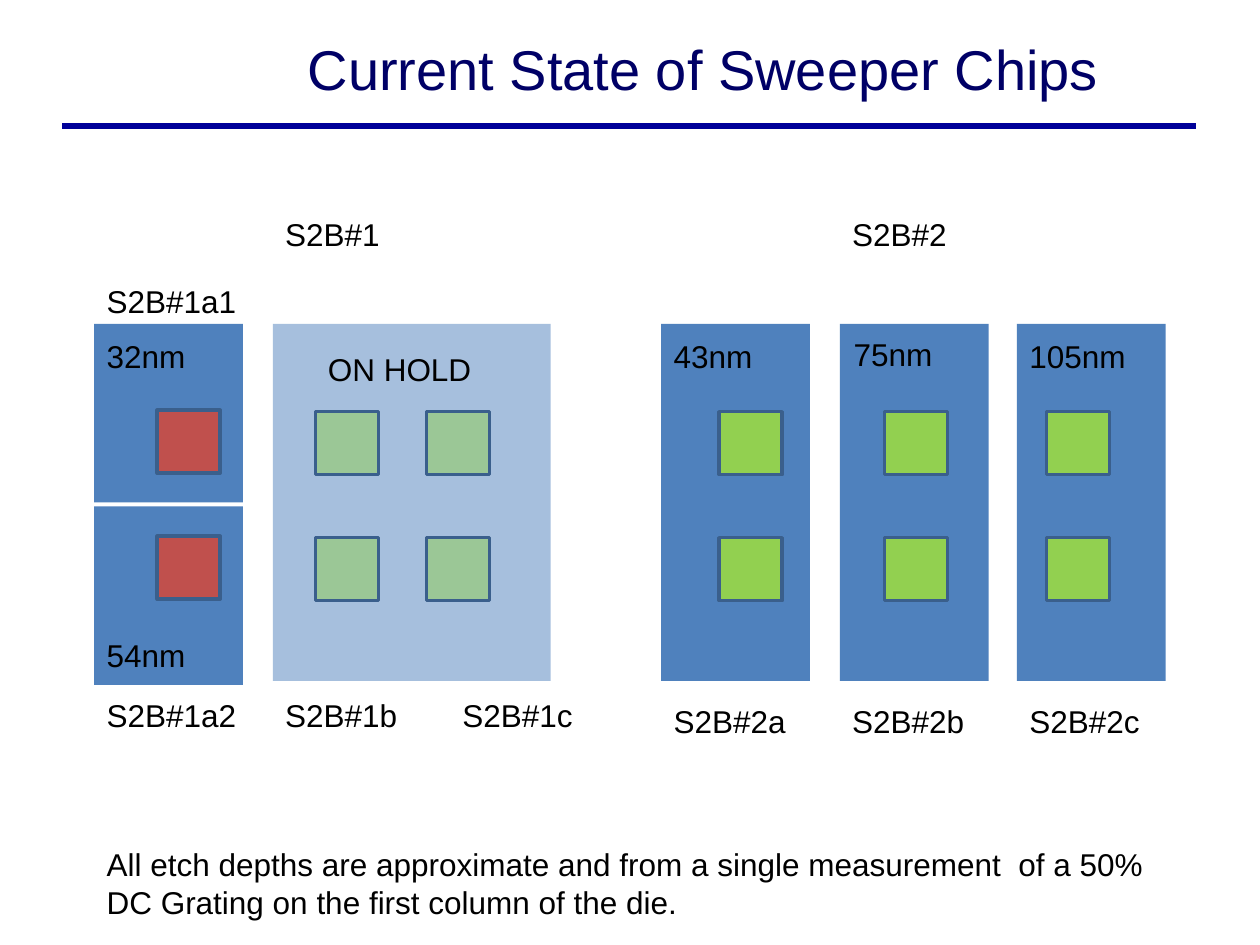
from lxml import etree
from pptx import Presentation, util as u
from pptx.dml.color import RGBColor
from pptx.enum import shapes, text
from pptx.oxml import ns

DIE, PASS, FAIL, EDGE = "4F81BD", "92D050", "C0504D", "3A5F8C"
DIE_W, DIE_H, HALF_H = 3, 7.2, 3.6
CHIP, CHIP_TOP, CHIP_PITCH = 1.27, 1.77, 2.54
LABEL_H = 1.02
COLUMNS = (0, 3.6, 7.17)
BODY = {"name": "Arial", "size": u.Pt(18)}
HEADING = {"name": "Arial", "size": u.Pt(32), "bold": False}


def rgb(value):
    return RGBColor.from_string(value)


def cm(*values):
    return [u.Cm(value) for value in values]


def format_font(font, style, color):
    for key, value in style.items():
        setattr(font, key, value)
    font.color.rgb = rgb(color)


def add_block(slide, box, fill, edge=None, alpha=None):
    block = slide.shapes.add_shape(shapes.MSO_SHAPE.RECTANGLE, *cm(*box))
    block.shadow.inherit = False
    block.fill.solid()
    block.fill.fore_color.rgb = rgb(fill)
    if alpha:
        color = block.fill._xPr.find(".//" + ns.qn("a:srgbClr"))
        etree.SubElement(color, ns.qn("a:alpha")).set("val", str(alpha * 1000))
    if edge:
        block.line.color.rgb = rgb(edge)
        block.line.width = u.Pt(2)
    else:
        block.line.fill.background()


def add_label(slide, left, top, wording, width=DIE_W, height=LABEL_H):
    label = slide.shapes.add_textbox(*cm(left, top, width, height))
    frame = label.text_frame
    frame.word_wrap = True
    frame.auto_size = text.MSO_AUTO_SIZE.SHAPE_TO_FIT_TEXT
    frame.text = wording
    format_font(frame.paragraphs[0].font, BODY, "000000")


def add_chip_column(slide, left, top, fill, alpha=None):
    for row in range(2):
        chip_top = top + CHIP_TOP + row * CHIP_PITCH
        add_block(slide, (left, chip_top, CHIP, CHIP), fill, EDGE, alpha)


def add_header(slide, left, top, width, height):
    title = slide.shapes.title
    title.left, title.top, title.width, title.height = cm(left + 3, top, width - 3, height)
    frame = title.text_frame
    frame.text = "Current State of Sweeper Chips"
    frame.vertical_anchor = text.MSO_ANCHOR.MIDDLE
    frame.paragraphs[0].alignment = text.PP_ALIGN.CENTER
    format_font(frame.paragraphs[0].font, HEADING, "000066")
    bottom = top + height
    rule = slide.shapes.add_connector(
        shapes.MSO_CONNECTOR.STRAIGHT, *cm(left, bottom, left + width, bottom))
    rule.line.color.rgb = rgb("000099")
    rule.line.width = u.Pt(3)
    etree.SubElement(rule._element.spPr, ns.qn("a:effectLst"))


def add_first_lot(slide, left, top):
    for half_top in (0, HALF_H + 0.08):
        add_block(slide, (left, top + half_top, DIE_W, HALF_H), DIE)
    add_chip_column(slide, left + 1.27, top - 0.03, FAIL)
    held = left + COLUMNS[1]
    add_block(slide, (held, top, 5.6, DIE_H), DIE, alpha=50)
    for offset in (0.86, 3.1):
        add_chip_column(slide, held + offset, top, PASS, 50)
    add_label(slide, held, top - 2.31, "S2B#1")
    add_label(slide, left, top - 0.96, "S2B#1a1", 3.6)
    add_label(slide, left, top + 0.13, "32nm")
    add_label(slide, left, top + 6.17, "54nm")
    add_label(slide, held + 0.86, top + 0.4, "ON HOLD", 3.94)
    for offset, name, width in zip(COLUMNS, ("S2B#1a2", "S2B#1b", "S2B#1c"), (3.4, 3, 3)):
        add_label(slide, left + offset, top + 7.38, name, width)


def add_second_lot(slide, left, top):
    add_label(slide, left + COLUMNS[1], top - 2.31, "S2B#2")
    dies = (("S2B#2a", "43nm", 1.17, 0), ("S2B#2b", "75nm", 0.9, 0.03),
            ("S2B#2c", "105nm", 0.6, 0))
    for offset, (name, depth, chip_left, shift) in zip(COLUMNS, dies):
        die_left = left + offset
        add_block(slide, (die_left, top, DIE_W, DIE_H), DIE)
        add_chip_column(slide, die_left + chip_left, top, PASS)
        add_label(slide, die_left + shift, top + 0.13 - shift, depth)
        add_label(slide, die_left, top + 7.5, name)


def main():
    deck = Presentation()
    deck.slide_width, deck.slide_height = cm(25.4, 19.05)
    slide = deck.slides.add_slide(deck.slide_layouts[5])
    add_header(slide, 1.25, 0.2, 22.86, 2.34)
    add_first_lot(slide, 1.9, 6.53)
    add_second_lot(slide, 13.33, 6.53)
    add_label(slide, 1.9, 16.92,
              "All etch depths are approximate and from a single measurement  of a 50% "
              "DC Grating on the first column of the die.", 21.6, 1.8)
    deck.save("out.pptx")


if __name__ == "__main__":
    main()
